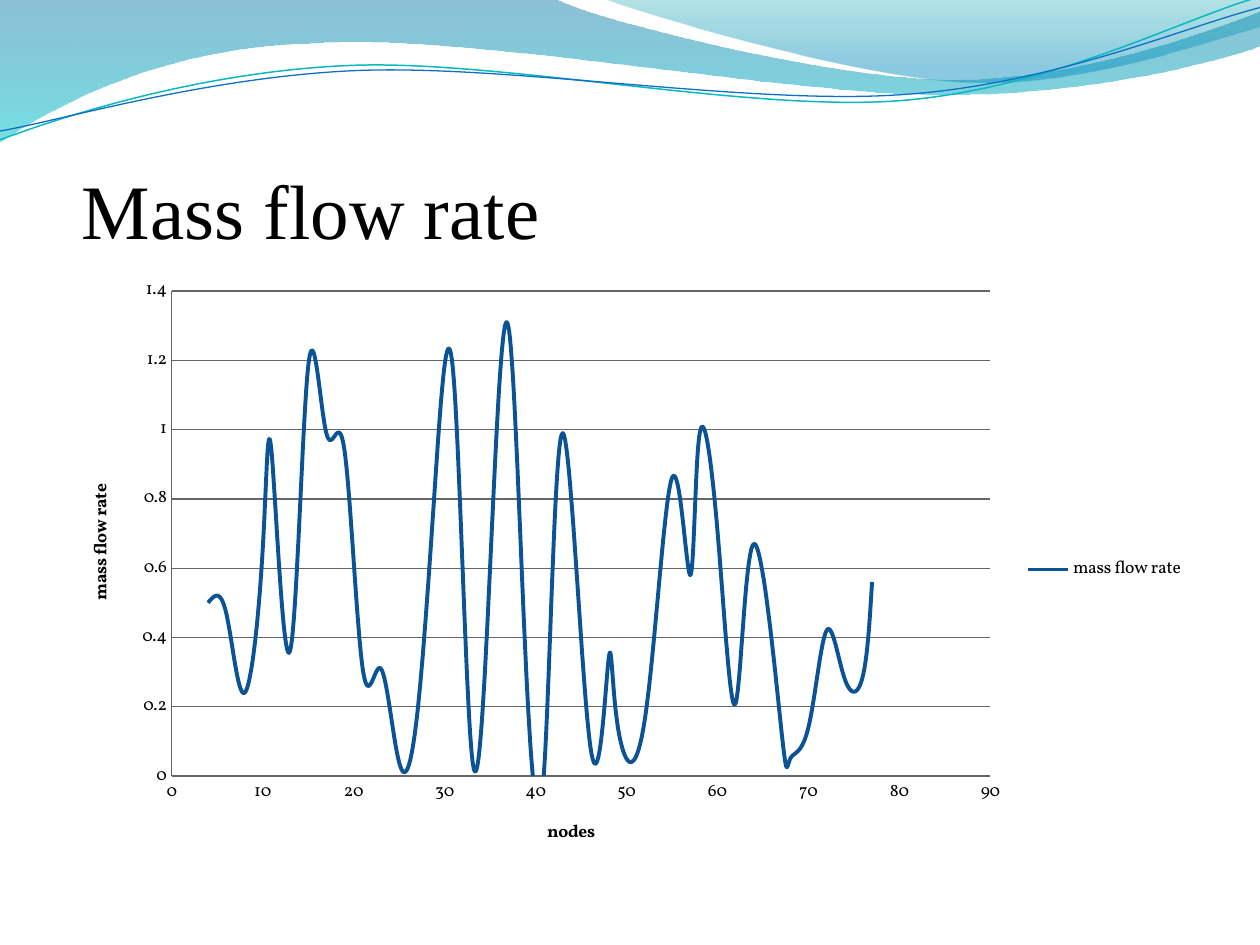
from dataclasses import dataclass
from math import cos, radians, sin

from lxml.etree import SubElement
from pptx import Presentation
from pptx.chart.data import XyChartData
from pptx.dml.color import RGBColor
from pptx.enum.chart import XL_CHART_TYPE, XL_LEGEND_POSITION, XL_TICK_MARK
from pptx.enum.text import MSO_ANCHOR, MSO_AUTO_SIZE, PP_ALIGN
from pptx.oxml.ns import qn
from pptx.util import Inches, Pt

COLUMNS, ROWS, CELL = 10, 7.5, Inches(1)
BLACK, GRID, SERIES = "000000", "666666", "0B5394"
SERIF, CHART_FONT = "Times New Roman", "Vollkorn"
LINE_TILT, LINE_CENTER = -2.7, (4.99, 0.58)
POINTS = (
    (4, 0.5), (6, 0.47), (8, 0.24), (10, 0.65), (11, 0.93), (13, 0.36), (15, 1.18),
    (17, 0.99), (19, 0.94), (21, 0.31), (23, 0.31), (25, 0.04), (27, 0.18), (29, 0.86),
    (31, 1.15), (33, 0.06), (35, 0.6), (37, 1.3), (39, 0.29), (41, 0.04), (43, 0.99),
    (46, 0.09), (48, 0.33), (49, 0.15), (52, 0.16), (55, 0.86), (57, 0.58), (58, 0.98),
    (60, 0.71), (62, 0.21), (64, 0.67), (67, 0.14), (68, 0.05), (70, 0.14), (72, 0.42),
    (74, 0.28), (76, 0.29), (77, 0.56),
)


@dataclass(frozen=True)
class Stop:
    """A gradient stop: share of the way, colour and opacity in percent."""
    position: float
    color: str
    opacity: int


@dataclass(frozen=True)
class Wave:
    """An outline in grid cells: pairs are corners, sextuples are Bezier curves."""
    start: tuple
    steps: tuple
    stops: tuple = ()
    line: str = ""
    width: float = 0
    tilt: float = 0


WAVES = (
    Wave((0, 0), (
        (4.4, -0.01), (4.76, 0.17, 6.64, 0.63, 7.58, 0.63),
        (8.53, 0.63, 9.58, 0.26, 10, 0.09), (10.01, 0.36),
        (9.83, 0.44, 8.7, 0.76, 7.46, 0.75), (6.22, 0.75, 3.82, 0.28, 2.57, 0.34),
        (1.29, 0.36, 0.46, 0.83, -0.01, 1.13),
    ), stops=(Stop(0, "0074A1", 45), Stop(1, "00C6CF", 55))),
    Wave((4.79, -0.01), (
        (5.09, 0.11, 6.82, 0.62, 7.69, 0.65), (8.56, 0.69, 9.61, 0.32, 10, 0.21), (10, 0),
    ), stops=(Stop(0, "00A1A9", 30), Stop(0.8, "008BBF", 45))),
    Wave((0, 1.11), (
        (0.48, 0.93, 1.58, 0.57, 2.77, 0.52), (3.95, 0.47, 5.93, 0.89, 7.13, 0.8),
        (8.33, 0.71, 9.38, 0.15, 9.98, -0.02),
    ), line="0AB8BF", width=0.85, tilt=LINE_TILT),
    Wave((0, 1.04), (
        (0.47, 0.96, 1.64, 0.61, 2.83, 0.56), (4.03, 0.51, 5.97, 0.84, 7.17, 0.75),
        (8.36, 0.67, 9.41, 0.21, 10, 0.06),
    ), line="0F6FC6", width=0.75, tilt=LINE_TILT),
)


def paint(color_format, color: str) -> None:
    """Set a colour from a hex string."""
    color_format.rgb = RGBColor.from_string(color)


def cells(*lengths: float) -> list[int]:
    """Turn grid cells into slide units."""
    return [round(length * CELL) for length in lengths]


def level(step: tuple, tilt: float) -> list[list[int]]:
    """Undo a tilt for the points of a step, in slide units."""
    turn, (middle_x, middle_y) = radians(-tilt), LINE_CENTER
    points = []
    for x, y in zip(step[::2], step[1::2]):
        across, down = x - middle_x, y - middle_y
        points.append(cells(middle_x + across * cos(turn) - down * sin(turn),
                            middle_y + across * sin(turn) + down * cos(turn)))
    return points


def bend(shape, steps: list) -> None:
    """Turn the straight segments with control points into Bezier curves."""
    segments = list(shape._element.iter(qn("a:lnTo")))
    for segment, points in zip(segments, steps):
        if len(points) == 3:
            bezier = SubElement(segment.getparent(), qn("a:cubicBezTo"))
            for x, y in points:
                SubElement(bezier, qn("a:pt"), x=str(x - shape.left), y=str(y - shape.top))
            segment.getparent().replace(segment, bezier)


def fill_gradient(shape, stops: tuple) -> None:
    """Fill a shape from top to bottom with translucent colours."""
    shape.fill.gradient()
    shape.fill.gradient_angle = 270
    for target, stop in zip(shape.fill.gradient_stops, stops):
        paint(target.color, stop.color)
        target.position = stop.position
    for node, stop in zip(shape._element.spPr.iter(qn("a:srgbClr")), stops):
        SubElement(node, qn("a:alpha"), val=str(stop.opacity * 1000))


def draw_wave(page, wave: Wave) -> None:
    """Draw a gradient band or a thin curved line."""
    start = level(wave.start, wave.tilt)[0]
    steps = [level(step, wave.tilt) for step in wave.steps]
    builder = page.shapes.build_freeform(*start)
    builder.add_line_segments([points[-1] for points in steps], close=bool(wave.stops))
    shape = builder.convert_to_shape()
    shape.shadow.inherit = False
    bend(shape, steps)
    shape.rotation = wave.tilt
    if wave.stops:
        shape.line.fill.background()
        fill_gradient(shape, wave.stops)
    else:
        shape.fill.background()
        paint(shape.line.color, wave.line)
        shape.line.width = Pt(wave.width)


def write_text(frame, text: str, *, size: float, font: str, color: str = BLACK,
               bold: bool = False) -> None:
    """Write one formatted paragraph."""
    span = frame.paragraphs[0].add_run()
    span.text = text
    span.font.size, span.font.name, span.font.bold = Pt(size), font, bold
    paint(span.font.color, color)


def draw_title(page, text: str) -> None:
    """Place and format the title, in front of the waves."""
    box = page.shapes.title
    box.left, box.top, box.width, box.height = cells(0.5, 0.77, 9, 1.25)
    frame = box.text_frame
    frame.auto_size, frame.vertical_anchor = MSO_AUTO_SIZE.NONE, MSO_ANCHOR.BOTTOM
    frame.margin_right = frame.margin_bottom = 0
    frame.margin_left, frame.margin_top = cells(0.15, 0.05)
    write_text(frame, text, size=44, font=SERIF)
    frame.paragraphs[0].alignment = PP_ALIGN.LEFT
    box._element.getparent().append(box._element)


def format_axis(axis, title: str, maximum: float, unit: float, gridlines: bool) -> None:
    """Set an axis's title, scale and lines."""
    axis.minimum_scale, axis.maximum_scale, axis.major_unit = 0, maximum, unit
    axis.major_tick_mark = axis.minor_tick_mark = XL_TICK_MARK.NONE
    axis.has_major_gridlines = gridlines
    write_text(axis.axis_title.text_frame, title, size=10, font=CHART_FONT, bold=True)
    axis.tick_labels.number_format = "General"
    axis.tick_labels.number_format_is_linked = False
    lines = [axis.format.line] + ([axis.major_gridlines.format.line] if gridlines else [])
    for line in lines:
        paint(line.color, GRID)
        line.width = Pt(0.75)


def draw_chart(page, name: str) -> None:
    """Draw the smooth scatter chart."""
    data = XyChartData()
    series_data = data.add_series(name)
    for node, rate in POINTS:
        series_data.add_data_point(node, rate)
    chart = page.shapes.add_chart(
        XL_CHART_TYPE.XY_SCATTER_SMOOTH_NO_MARKERS, *cells(0.5, 2.12, 9, 4.8), data).chart
    chart.has_title = False
    chart.font.size, chart.font.name = Pt(10), CHART_FONT
    paint(chart.font.color, BLACK)
    chart.has_legend = True
    chart.legend.position = XL_LEGEND_POSITION.RIGHT
    chart.legend.include_in_layout = False
    format_axis(chart.category_axis, "nodes", 90, 10, False)
    format_axis(chart.value_axis, name, 1.4, 0.2, True)
    plot = chart.plots[0]
    plot.vary_by_categories = False
    series = plot.series[0]
    series._element.get_or_add_smooth().val = True
    paint(series.format.line.color, SERIES)
    series.format.line.width = Pt(2.25)


def main() -> None:
    """Build the slide and save it."""
    deck = Presentation()
    deck.slide_width, deck.slide_height = cells(COLUMNS, ROWS)
    page = deck.slides.add_slide(deck.slide_layouts[5])
    for wave in WAVES:
        draw_wave(page, wave)
    draw_title(page, "Mass flow rate")
    draw_chart(page, "mass flow rate")
    deck.save("out.pptx")


if __name__ == "__main__":
    main()
